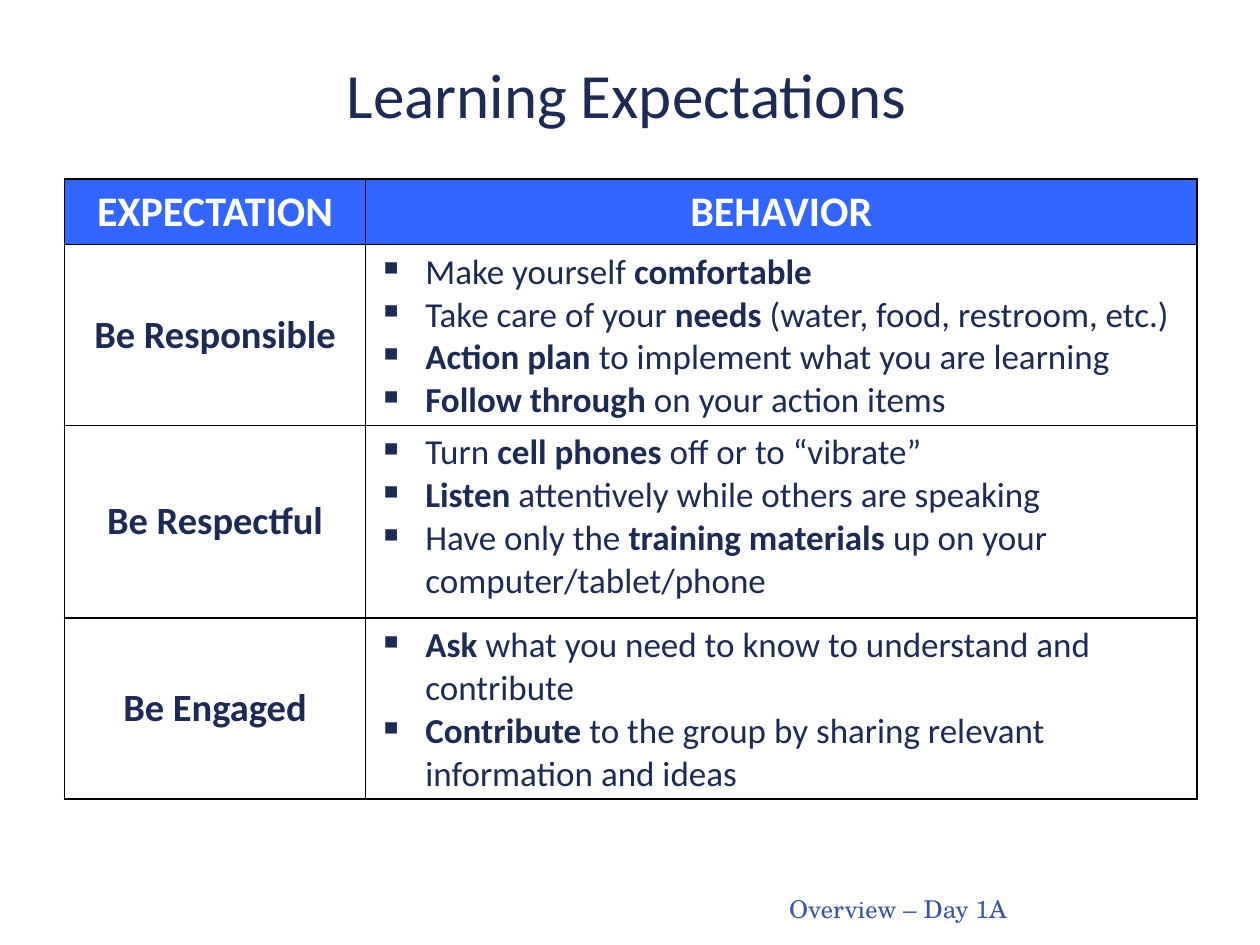
from lxml.etree import SubElement
from pptx import Presentation
from pptx.dml.color import RGBColor
from pptx.enum.text import MSO_ANCHOR as Anchor, PP_ALIGN as Align
from pptx.oxml import parse_xml
from pptx.oxml.ns import nsdecls, qn
from pptx.util import Cm, Pt

NAVY, BLUE, WHITE, BLACK, FOOTER_BLUE = "1D2A53", "3366FF", "FFFFFF", "000000", "3A53A5"
COLUMN_WIDTHS = (6.07, 16.76)
ROW_HEIGHTS = (1.32, 3.48, 3.89, 3.48)
HEADINGS = ("EXPECTATION", "BEHAVIOR")
# Words between ** marks are bold.
EXPECTATIONS = (
    ("Be Responsible", (
        "Make yourself **comfortable**",
        "Take care of your **needs** (water, food, restroom, etc.)",
        "**Action plan **to implement what you are learning",
        "**Follow through **on your action items",
    )),
    ("Be Respectful", (
        "Turn **cell phones** off or to “vibrate”",
        "**Listen **attentively while others are speaking",
        "Have only the **training materials **up on your computer/tablet/phone",
    )),
    ("Be Engaged", (
        "**Ask** what you need to know to understand and contribute",
        "**Contribute **to the group by sharing relevant information and ideas",
    )),
)


def rgb(color):
    return RGBColor.from_string(color)


def format_font(font, size, color, bold=False, name="Calibri"):
    font.name, font.size, font.bold = name, Pt(size), bold
    font.color.rgb = rgb(color)


def add_line(slide, box, text, align, size, color, name="Calibri"):
    shape = slide.shapes.add_textbox(*(Cm(length) for length in box))
    text_frame = shape.text_frame
    text_frame.word_wrap = True
    text_frame.vertical_anchor = Anchor.MIDDLE
    text_frame.text = text
    paragraph = text_frame.paragraphs[0]
    paragraph.alignment = align
    format_font(paragraph.runs[0].font, size, color, name=name)


def style_cell(cell, fill):
    cell.fill.solid()
    cell.fill.fore_color.rgb = rgb(fill)
    properties = cell._tc.get_or_add_tcPr()
    for position, side in enumerate("LRTB"):
        properties.insert(position, parse_xml(
            f'<a:ln{side} {nsdecls("a")} w="{Pt(1)}"><a:solidFill>'
            f'<a:srgbClr val="{BLACK}"/></a:solidFill></a:ln{side}>'))


def fill_label(cell, text, size, color, fill):
    style_cell(cell, fill)
    cell.vertical_anchor = Anchor.MIDDLE
    cell.text = text
    paragraph = cell.text_frame.paragraphs[0]
    paragraph.alignment = Align.CENTER
    format_font(paragraph.runs[0].font, size, color, bold=True)


def add_bullet(paragraph):
    properties = paragraph._p.get_or_add_pPr()
    properties.set("marL", str(Cm(0.95)))
    properties.set("indent", str(-Cm(0.95)))
    bullet_color = SubElement(properties, qn("a:buClr"))
    SubElement(bullet_color, qn("a:srgbClr"), val=NAVY)
    SubElement(properties, qn("a:buChar"), char="▪")


def fill_behaviors(cell, behaviors):
    style_cell(cell, WHITE)
    text_frame = cell.text_frame
    for index, behavior in enumerate(behaviors):
        paragraph = text_frame.add_paragraph() if index else text_frame.paragraphs[0]
        add_bullet(paragraph)
        for part, words in enumerate(behavior.split("**")):
            if words:
                run = paragraph.add_run()
                run.text = words
                format_font(run.font, 20, NAVY, bold=part % 2 == 1)


def add_expectations_table(slide, left, top):
    table = slide.shapes.add_table(
        len(ROW_HEIGHTS), len(COLUMN_WIDTHS), Cm(left), Cm(top),
        Cm(sum(COLUMN_WIDTHS)), Cm(sum(ROW_HEIGHTS))).table
    for column, width in zip(table.columns, COLUMN_WIDTHS):
        column.width = Cm(width)
    for row, height in zip(table.rows, ROW_HEIGHTS):
        row.height = Cm(height)
    for column, heading in enumerate(HEADINGS):
        fill_label(table.cell(0, column), heading, 24, WHITE, BLUE)
    for row, (expectation, behaviors) in enumerate(EXPECTATIONS, start=1):
        fill_label(table.cell(row, 0), expectation, 22, NAVY, WHITE)
        fill_behaviors(table.cell(row, 1), behaviors)


def main():
    presentation = Presentation()
    presentation.slide_width, presentation.slide_height = Cm(25.4), Cm(19.05)
    slide = presentation.slides.add_slide(presentation.slide_layouts[6])
    add_line(slide, (1.3, 1.02, 22.66, 1.73), "Learning Expectations",
             Align.CENTER, 36, NAVY)
    add_expectations_table(slide, 1.3, 3.61)
    add_line(slide, (6.4, 17.88, 14.15, 0.86), "Overview – Day 1A",
             Align.RIGHT, 14, FOOTER_BLUE, "TeX Gyre Schola")
    presentation.save("out.pptx")


if __name__ == "__main__":
    main()
